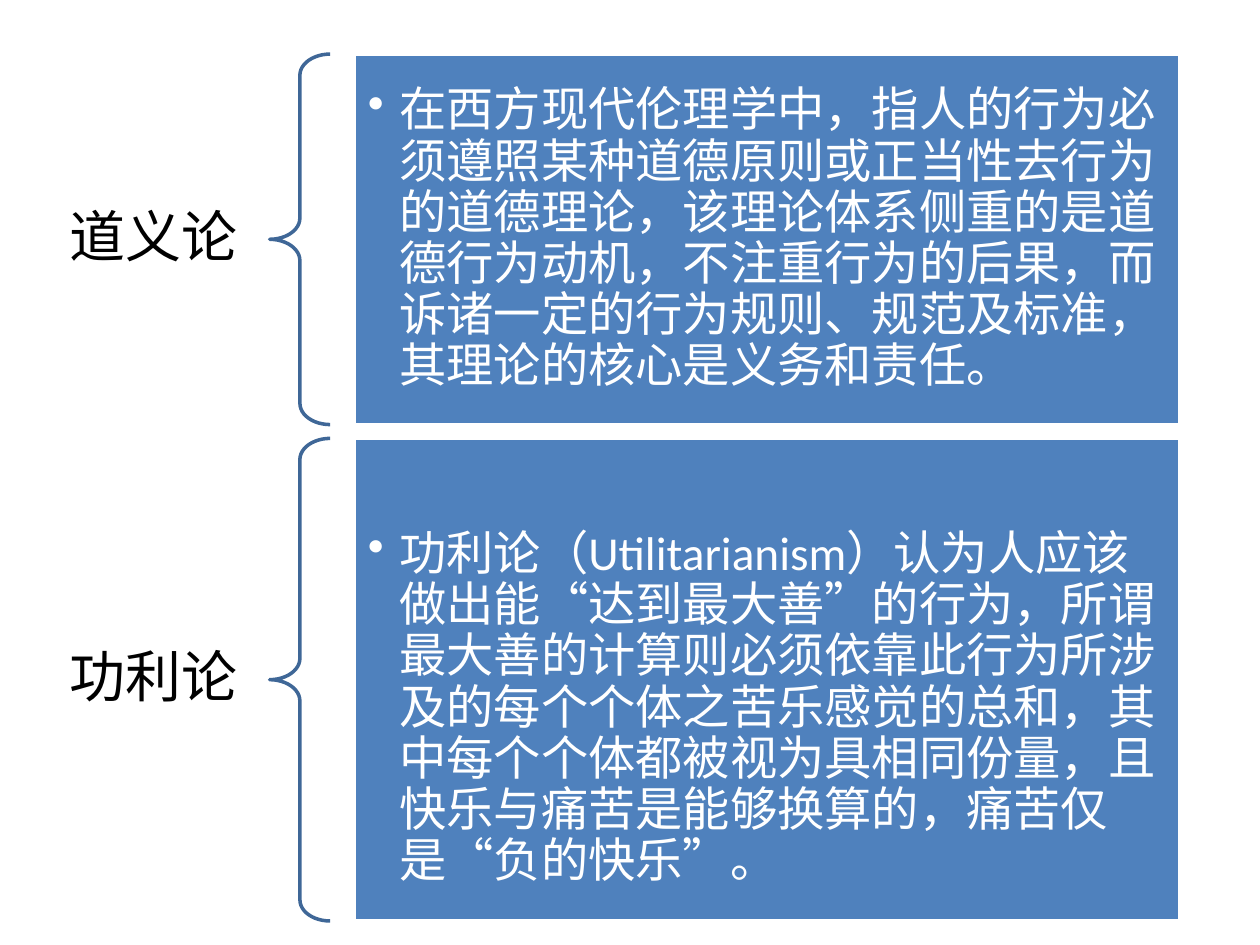
import pptx
import pptx.dml.color
import pptx.enum.shapes
import pptx.enum.text
import pptx.oxml
import pptx.oxml.ns
import pptx.util

RGB = pptx.dml.color.RGBColor
SHAPE = pptx.enum.shapes.MSO_SHAPE
ALIGN = pptx.enum.text.PP_ALIGN
ANCHOR = pptx.enum.text.MSO_ANCHOR
Inches, Pt = pptx.util.Inches, pptx.util.Pt

BLUE = RGB(0x4F, 0x81, 0xBD)
DARK = RGB(0x3F, 0x67, 0x97)
WHITE = RGB(0xFF, 0xFF, 0xFF)
BLACK = RGB(0x00, 0x00, 0x00)

WIDE, HIGH = 10, 7.5
COLS, ROWS = 100, 75
TOP, GAP = 4.3, 1.1

# name, rows high, top inset in inches, meaning
TERMS = [
    ("道义论", 29.4, 0.11,
     "在西方现代伦理学中，指人的行为必须遵照某种道德原则或正当性去行为的道德理论，"
     "该理论体系侧重的是道德行为动机，不注重行为的后果，而诉诸一定的行为规则、"
     "规范及标准，其理论的核心是义务和责任。"),
    ("功利论", 38.3, 0.57,
     "功利论（Utilitarianism）认为人应该做出能“达到最大善”的行为，所谓最大善的计算则"
     "必须依靠此行为所涉及的每个个体之苦乐感觉的总和，其中每个个体都被视为具相同份量，"
     "且快乐与痛苦是能够换算的，痛苦仅是“负的快乐”。"),
]


def put(thing, vals):
    for key, val in vals.items():
        setattr(thing, key, val)


class Slide:
    """Style and current slide; places are in grid columns and rows."""

    face = "Calibri"
    line = Pt(2)

    def __init__(self, deck):
        self.page = deck.slides.add_slide(deck.slide_layouts[6])

    def grid(self, left, top, cols, rows):
        return (Inches(left * WIDE / COLS), Inches(top * HIGH / ROWS),
                Inches(cols * WIDE / COLS), Inches(rows * HIGH / ROWS))

    def shape(self, kind, place, edge):
        item = self.page.shapes.add_shape(kind, *self.grid(*place))
        item.shadow.inherit = False
        item.line.color.rgb = edge
        item.line.width = self.line
        return item

    def words(self, item, text, size, color, align, pads, mark=False):
        frame = item.text_frame
        put(frame, {"word_wrap": True, "vertical_anchor": ANCHOR.MIDDLE})
        sides = ("left", "top", "right", "bottom")
        put(frame, {f"margin_{side}": Inches(pad)
                    for side, pad in zip(sides, pads)})
        para = frame.paragraphs[0]
        para.text = text
        put(para, {"alignment": align, "line_spacing": 0.9})
        if mark:
            self.bullet(para)
        put(para.font, {"name": self.face, "size": Pt(size)})
        para.font.color.rgb = color

    def bullet(self, para):
        props = para._p.get_or_add_pPr()
        props.set("marL", str(Inches(0.25)))
        props.set("indent", str(Inches(-0.25)))
        sign = pptx.oxml.ns.qn("a:buChar")
        props.append(props.makeelement(sign, {"char": "•"}))

    def label(self, place, text):
        item = self.page.shapes.add_textbox(*self.grid(*place))
        self.words(item, text, 32, BLACK, ALIGN.RIGHT,
                   (0.25, 0.09, 0.25, 0.09))

    def brace(self, place):
        item = self.shape(SHAPE.LEFT_BRACE, place, DARK)
        item.fill.background()
        item.adjustments[0] = 0.35
        item.adjustments[1] = 0.5

    def panel(self, place, text, inset):
        item = self.shape(SHAPE.RECTANGLE, place, WHITE)
        item.fill.solid()
        item.fill.fore_color.rgb = BLUE
        self.words(item, text, 27, WHITE, ALIGN.LEFT,
                   (0.11, inset, 0.11, 0.11), mark=True)


def main():
    deck = pptx.Presentation()
    put(deck, {"slide_width": Inches(WIDE), "slide_height": Inches(HIGH)})
    slide = Slide(deck)
    top = TOP
    for name, rows, inset, text in TERMS:
        slide.label((0, top, 21.4, rows), name)
        slide.brace((21.4, top, 4.8, rows))
        slide.panel((28.1, top, 65.5, rows), text, inset)
        top += rows + GAP
    deck.save("out.pptx")


if __name__ == "__main__":
    main()
